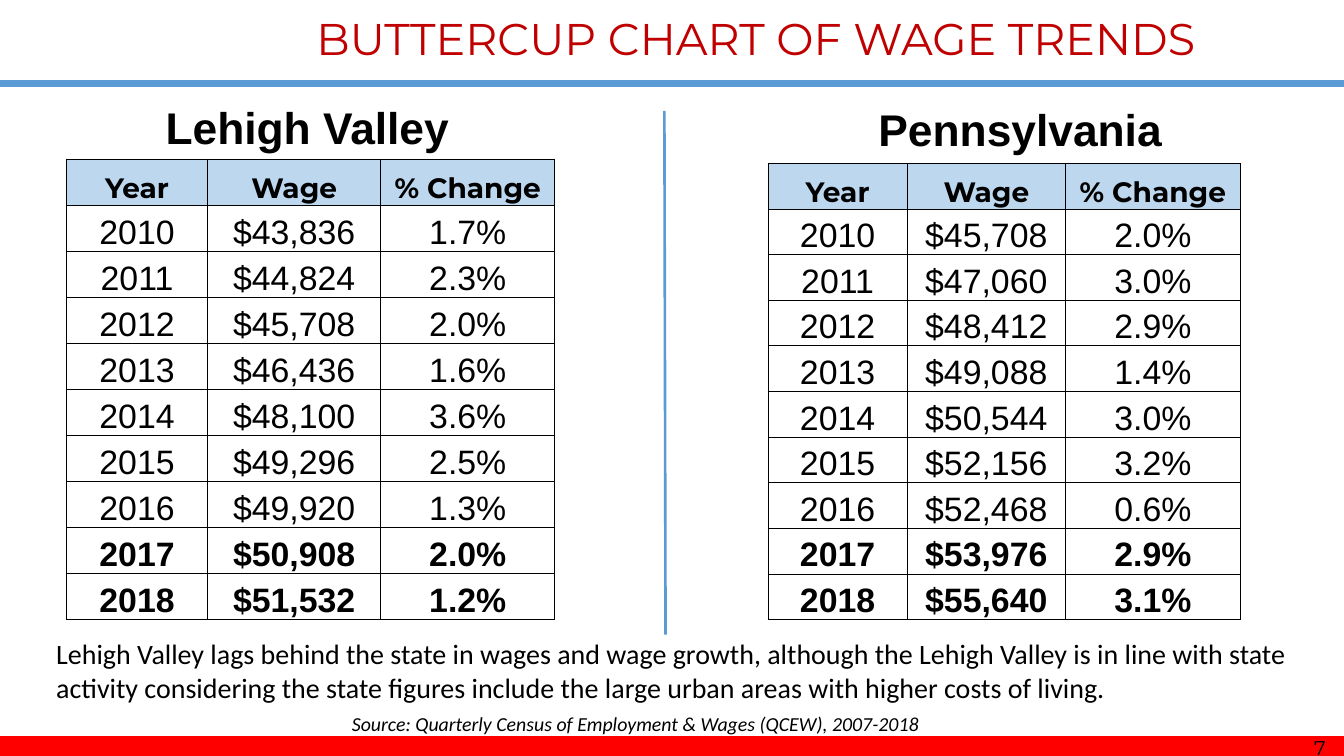
import pptx
import pptx.util
import pptx.dml.color
import pptx.enum.shapes
import pptx.enum.text
import pptx.oxml
import pptx.oxml.ns

Pt = pptx.util.Pt
ALIGN = pptx.enum.text.PP_ALIGN
ANCHOR = pptx.enum.text.MSO_ANCHOR
BLACK, BLUE, PALE_BLUE, RED, DARK_RED = "000000", "5B9BD5", "BDD7EE", "FF0000", "C00000"


def color(hex_code):
    return pptx.dml.color.RGBColor.from_string(hex_code)


def write(frame, text, size, font, align, bold=False, italic=False, ink=BLACK):
    frame.text = text
    paragraph = frame.paragraphs[0]
    paragraph.alignment = align
    style = paragraph.runs[0].font
    style.size, style.name, style.bold, style.italic = Pt(size), font, bold, italic
    style.color.rgb = color(ink)


presentation = pptx.Presentation()
presentation.slide_width, presentation.slide_height = Pt(1152), Pt(648)
slide = presentation.slides.add_slide(presentation.slide_layouts[5])
shapes = slide.shapes

# Title
title = shapes.title
title.left, title.top, title.width, title.height = Pt(160), Pt(6), Pt(976), Pt(55)
title.text_frame.auto_size = pptx.enum.text.MSO_AUTO_SIZE.NONE
title.text_frame.vertical_anchor = ANCHOR.TOP
write(title.text_frame, "BUTTERCUP CHART OF WAGE TRENDS", 38, "Montserrat", ALIGN.CENTER, ink=DARK_RED)

# Rule under the title and divider between the regions
for x1, y1, x2, y2, weight in [(0, 71.3, 1152, 71.3, 6), (569.5, 95, 570.5, 544, 2.25)]:
    rule = shapes.add_connector(
        pptx.enum.shapes.MSO_CONNECTOR.STRAIGHT, Pt(x1), Pt(y1), Pt(x2), Pt(y2))
    rule.line.color.rgb = color(BLUE)
    rule.line.width = Pt(weight)
    rule._element.spPr.append(pptx.oxml.parse_xml(
        f"<a:effectLst {pptx.oxml.ns.nsdecls('a')}/>"))

# Wage tables
header = ("Year", "Wage", "% Change")
lehigh_valley = [
    ("2010", "$43,836", "1.7%"), ("2011", "$44,824", "2.3%"), ("2012", "$45,708", "2.0%"),
    ("2013", "$46,436", "1.6%"), ("2014", "$48,100", "3.6%"), ("2015", "$49,296", "2.5%"),
    ("2016", "$49,920", "1.3%"), ("2017", "$50,908", "2.0%"), ("2018", "$51,532", "1.2%"),
]
pennsylvania = [
    ("2010", "$45,708", "2.0%"), ("2011", "$47,060", "3.0%"), ("2012", "$48,412", "2.9%"),
    ("2013", "$49,088", "1.4%"), ("2014", "$50,544", "3.0%"), ("2015", "$52,156", "3.2%"),
    ("2016", "$52,468", "0.6%"), ("2017", "$53,976", "2.9%"), ("2018", "$55,640", "3.1%"),
]
regions = [
    (lehigh_valley, 57, 136.5, 39.5, (121, 148.5, 149)),
    (pennsylvania, 658.5, 140.2, 39.1, (119, 136, 149.5)),
]
for wages, left, top, row_height, widths in regions:
    rows = [header] + wages
    table = shapes.add_table(len(rows), len(header), Pt(left), Pt(top),
                             Pt(sum(widths)), Pt(row_height * len(rows))).table
    table.first_row = table.horz_banding = False
    for column, width in zip(table.columns, widths):
        column.width = Pt(width)
    for r, values in enumerate(rows):
        table.rows[r].height = Pt(row_height)
        for c, value in enumerate(values):
            cell = table.cell(r, c)
            cell.margin_left = cell.margin_right = cell.margin_top = Pt(0.7)
            cell.margin_bottom = Pt(0)
            cell.vertical_anchor = ANCHOR.BOTTOM
            for side in ("lnL", "lnR", "lnT", "lnB"):
                cell._tc.get_or_add_tcPr().append(pptx.oxml.parse_xml(
                    f'<a:{side} {pptx.oxml.ns.nsdecls("a")} w="{Pt(1)}"><a:solidFill>'
                    f'<a:srgbClr val="{BLACK}"/></a:solidFill></a:{side}>'))
            if r == 0:
                cell.fill.solid()
                cell.fill.fore_color.rgb = color(PALE_BLUE)
                write(cell.text_frame, value, 24, "Montserrat", ALIGN.CENTER, bold=True)
            else:
                cell.fill.background()
                recent = values[0] in ("2017", "2018")
                write(cell.text_frame, value, 29, "Arial", ALIGN.CENTER, bold=recent)

# Footer band
band = shapes.add_shape(pptx.enum.shapes.MSO_SHAPE.RECTANGLE, Pt(0), Pt(631), Pt(1152), Pt(17))
band.shadow.inherit = False
band.fill.solid()
band.fill.fore_color.rgb = color(RED)
band.line.fill.background()

# Region headings, source, page number and takeaway
takeaway = ("Lehigh Valley lags behind the state in wages and wage growth, although the Lehigh "
            "Valley is in line with state activity considering the state figures include the "
            "large urban areas with higher costs of living.")
source = "Source: Quarterly Census of Employment & Wages (QCEW), 2007-2018"
captions = [
    ("Lehigh Valley", 67, 81.5, 393, 55, 38, "Arial", ALIGN.CENTER, True, False),
    ("Pennsylvania", 678, 83, 393, 55, 38, "Arial", ALIGN.CENTER, True, False),
    (source, 293, 605.5, 570, 29, 17, "Calibri", ALIGN.LEFT, False, True),
    ("7", 1110, 626.5, 35, 29, 17, "Montserrat", ALIGN.RIGHT, False, False),
    (takeaway, 39.6, 541.5, 1081, 67, 24, "Calibri", ALIGN.LEFT, False, False),
]
for text, left, top, width, height, *style in captions:
    frame = shapes.add_textbox(Pt(left), Pt(top), Pt(width), Pt(height)).text_frame
    frame.word_wrap = True
    frame.margin_left = frame.margin_right = Pt(8.6)
    frame.margin_top = frame.margin_bottom = Pt(4.3)
    write(frame, text, *style)

presentation.save("out.pptx")
